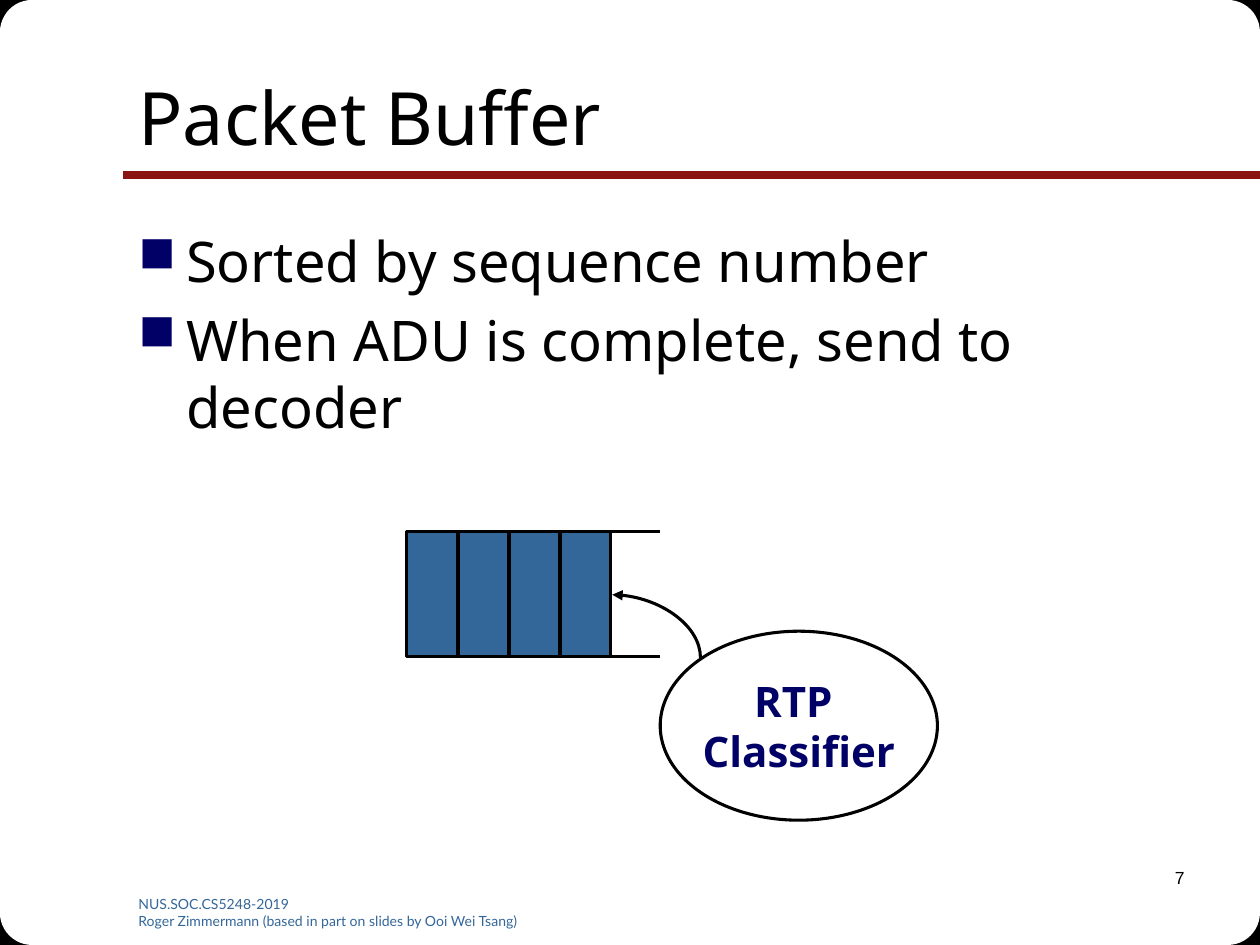
"""Build the Packet Buffer slide."""
import pptx
import pptx.util
import pptx.dml.color
import pptx.enum.shapes
import pptx.enum.text
import pptx.oxml
import pptx.oxml.ns
from lxml import etree

Inches, Pt = pptx.util.Inches, pptx.util.Pt
RGB = pptx.dml.color.RGBColor
SHAPE = pptx.enum.shapes.MSO_SHAPE
CONN = pptx.enum.shapes.MSO_CONNECTOR
ALIGN = pptx.enum.text.PP_ALIGN
ANCHOR = pptx.enum.text.MSO_ANCHOR
qn = pptx.oxml.ns.qn

BLACK = RGB(0x00, 0x00, 0x00)
WHITE = RGB(0xFF, 0xFF, 0xFF)
RED = RGB(0x89, 0x14, 0x11)
NAVY = RGB(0x00, 0x00, 0x66)
BLUE = RGB(0x33, 0x66, 0x99)

WIDTH, HEIGHT = 10, 7.5
TITLE = "Packet Buffer"
BULLETS = ["Sorted by sequence number", "When ADU is complete, send to decoder"]
CLASSIFIER = ["RTP ", "Classifier"]
FOOTER = ["NUS.SOC.CS5248-2019",
          "Roger Zimmermann (based in part on slides by Ooi Wei Tsang)"]
PAGE = "7"
CORNER, ROUND = (0.43, 0.44), (1.53, 1.53)
SLOTS, SLOT_LEFT, SLOT_STEP = 4, 3.23, 0.405
SLOT_TOP, SLOT_W, SLOT_H = 4.22, 0.4, 0.99
QUEUE_END = 5.24


def add_shape(s, kind, x, y, w, h, fill, line=None, weight=1.75):
    sp = s.shapes.add_shape(kind, Inches(x), Inches(y), Inches(w), Inches(h))
    sp.shadow.inherit = False
    sp.fill.solid()
    sp.fill.fore_color.rgb = fill
    if line is None:
        sp.line.fill.background()
    else:
        sp.line.color.rgb = line
        sp.line.width = Pt(weight)
    return sp


def add_line(s, x1, y1, x2, y2, color=BLACK, weight=1.75, kind=CONN.STRAIGHT):
    cn = s.shapes.add_connector(kind, Inches(x1), Inches(y1), Inches(x2), Inches(y2))
    cn.line.color.rgb = color
    cn.line.width = Pt(weight)
    etree.SubElement(cn._element.spPr, qn("a:effectLst"))
    return cn


def add_box(s, x, y, w, h):
    return s.shapes.add_textbox(Inches(x), Inches(y), Inches(w), Inches(h))


def write(sp, lines, size, color=BLACK, font="Noto Sans", bold=False,
          align=ALIGN.LEFT, anchor=ANCHOR.TOP, wrap=True, bullet=None):
    tf = sp.text_frame
    tf.word_wrap = wrap
    tf.vertical_anchor = anchor
    for i, text in enumerate(lines):
        p = tf.add_paragraph() if i else tf.paragraphs[0]
        p.alignment = align
        r = p.add_run()
        r.text = text
        r.font.name, r.font.size, r.font.bold = font, Pt(size), bold
        r.font.color.rgb = color
        if bullet:
            p.space_before = Pt(size * 0.2)
            add_bullet(p, bullet)


def add_bullet(p, char):
    pr = p._p.get_or_add_pPr()
    pr.set("marL", str(Inches(0.38)))
    pr.set("indent", str(-Inches(0.38)))
    clr = etree.SubElement(pr, qn("a:buClr"))
    etree.SubElement(clr, qn("a:srgbClr"), val=str(NAVY))
    etree.SubElement(pr, qn("a:buSzPct"), val="90000")
    etree.SubElement(pr, qn("a:buChar"), char=char)


def add_curved_arrow(s):
    cn = add_line(s, 5.46, 4.62, 4.96, 5.32, kind=CONN.CURVE)
    pr = cn._element.spPr
    pr.find(qn("a:xfrm")).set("rot", str(90 * 60000))
    pr.find(qn("a:prstGeom")).set("prst", "curvedConnector2")
    etree.SubElement(pr.find(qn("a:ln")), qn("a:tailEnd"), type="triangle")


def add_frame(s):
    for kind, (w, h), fill, line in ((SHAPE.RECTANGLE, CORNER, BLACK, BLACK),
                                     (SHAPE.ROUNDED_RECTANGLE, ROUND, WHITE, None)):
        for x in (0, WIDTH - w):
            for y in (0, HEIGHT - h):
                add_shape(s, kind, x, y, w, h, fill, line, 0.75)
    add_line(s, WIDTH, 1.39, 0.98, 1.39, RED, 4.5)


def add_queue(s):
    for i in range(SLOTS):
        add_shape(s, SHAPE.RECTANGLE, SLOT_LEFT + i * SLOT_STEP, SLOT_TOP,
                  SLOT_W, SLOT_H, BLUE, BLACK)
    for y in (SLOT_TOP, SLOT_TOP + SLOT_H):
        add_line(s, QUEUE_END, y, SLOT_LEFT + 3 * SLOT_STEP, y)


def main():
    prs = pptx.Presentation()
    prs.slide_width, prs.slide_height = Inches(WIDTH), Inches(HEIGHT)
    s = prs.slides.add_slide(prs.slide_layouts[6])
    add_frame(s)
    write(add_box(s, 1, 7.06, 3.42, 0.28), FOOTER, 8, BLUE, "Lato")
    write(add_box(s, 7.42, 6.83, 2.08, 0.5), [PAGE], 10, font="Arial", align=ALIGN.RIGHT)
    write(add_box(s, 1, 0.3, 8.5, 1.25), [TITLE], 42, anchor=ANCHOR.MIDDLE)
    write(add_box(s, 1, 1.75, 8.5, 4.95), BULLETS, 32, bullet="■")
    sp = add_shape(s, SHAPE.OVAL, QUEUE_END, 5.01, 2.2, 1.5, WHITE, BLACK)
    write(sp, CLASSIFIER, 24, NAVY, bold=True, align=ALIGN.CENTER,
          anchor=ANCHOR.MIDDLE, wrap=False)
    add_curved_arrow(s)
    add_queue(s)
    prs.save("out.pptx")


if __name__ == "__main__":
    main()
